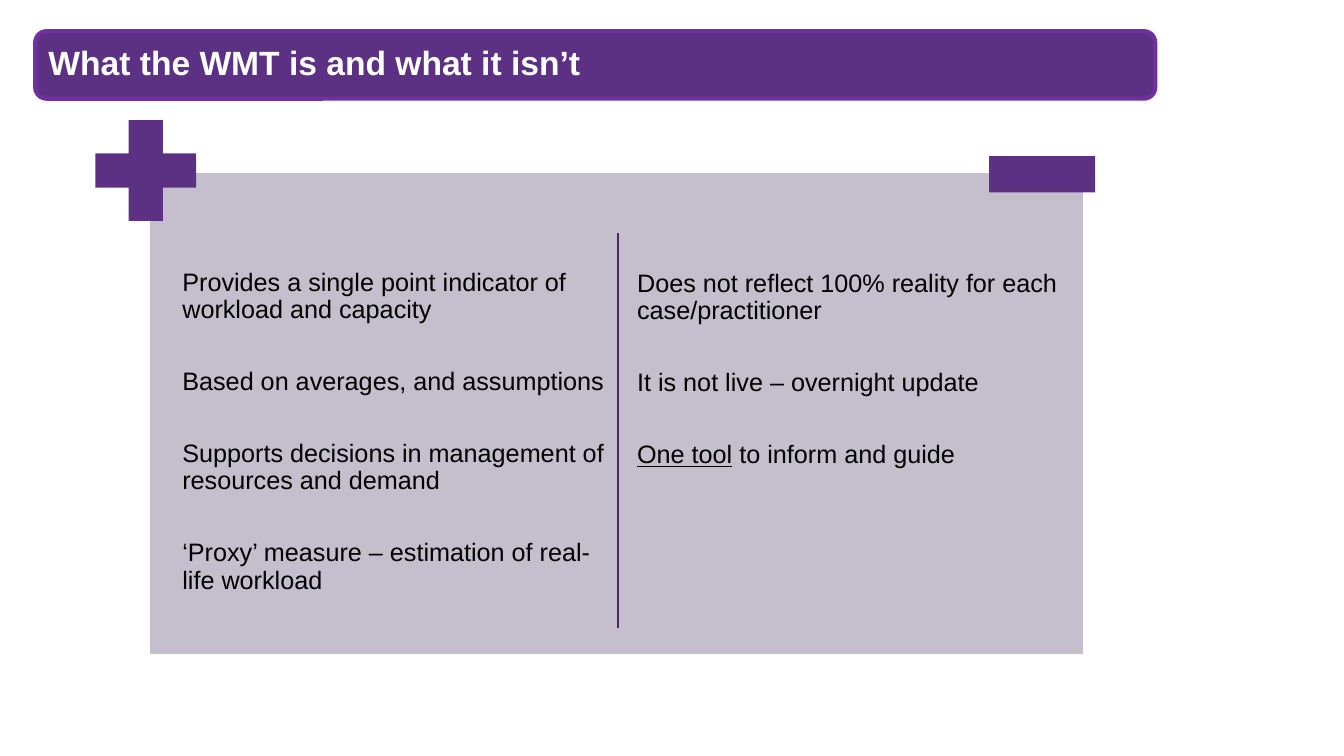
from lxml import etree
from pptx import Presentation
from pptx.dml.color import RGBColor
from pptx.enum.shapes import MSO_CONNECTOR, MSO_SHAPE as SHAPE
from pptx.enum.text import MSO_ANCHOR as ANCHOR, PP_ALIGN as ALIGN
from pptx.oxml.ns import qn
from pptx.util import Pt

TITLE = "What the WMT is and what it isn’t"
# Each point is a list of (text, underlined) spans.
STRENGTHS = [
    [("Provides a single point indicator of workload and capacity", False)],
    [("Based on averages, and assumptions", False)],
    [("Supports decisions in management of resources and demand", False)],
    [("‘Proxy’ measure – estimation of real-life workload", False)],
]
LIMITS = [
    [("Does not reflect 100% reality for each case/practitioner", False)],
    [("It is not live – overnight update", False)],
    [("One tool", True), (" to inform and guide", False)],
]
PURPLE, OUTLINE, PANEL = "5C3183", "7030A0", "C4BECD"
DIVIDER, WHITE, BLACK = "4A2769", "FFFFFF", "000000"

TEXT_WIDTH, TEXT_HEIGHT = 309.6, 250
POINT_GAP = 32
COLUMNS = [(127.4, 189.6, STRENGTHS), (452.2, 190.2, LIMITS)]


def colour(value):
    return RGBColor.from_string(value)


def add_block(page, kind, left, top, width, height, fill, line=None, weight=1):
    block = page.shapes.add_shape(kind, Pt(left), Pt(top), Pt(width), Pt(height))
    block.shadow.inherit = False
    block.fill.solid()
    block.fill.fore_color.rgb = colour(fill)
    if line:
        block.line.color.rgb = colour(line)
        block.line.width = Pt(weight)
    else:
        block.line.fill.background()
    return block


def write(shape, points, *, size, ink, bold=False, inset=2.9, gap=0, anchor=ANCHOR.TOP):
    frame = shape.text_frame
    frame.word_wrap = True
    frame.vertical_anchor = anchor
    frame.margin_left = frame.margin_right = Pt(inset)
    frame.margin_top = frame.margin_bottom = Pt(inset)
    for index, point in enumerate(points):
        para = frame.add_paragraph() if index else frame.paragraphs[0]
        para.alignment = ALIGN.LEFT
        para.line_spacing = 0.9
        if index:
            para.space_before = Pt(gap)
        for text, underlined in point:
            span = para.add_run()
            span.text = text
            font = span.font
            font.name, font.size, font.bold = "Arial", Pt(size), bold
            font.color.rgb = colour(ink)
            if underlined:
                font.underline = True


def main():
    deck = Presentation()
    deck.slide_width, deck.slide_height = Pt(960), Pt(540)
    page = deck.slides.add_slide(deck.slide_layouts[6])

    banner = add_block(page, SHAPE.ROUNDED_RECTANGLE, 25.2, 22.3, 800, 48.2, PURPLE, OUTLINE, 3)
    write(banner, [[(TITLE, False)]], size=24, ink=WHITE, bold=True, inset=7.2,
          anchor=ANCHOR.MIDDLE)

    add_block(page, SHAPE.RECTANGLE, 106.6, 123.3, 667.4, 344.7, PANEL, WHITE)
    for left, top, points in COLUMNS:
        box = page.shapes.add_textbox(Pt(left), Pt(top), Pt(TEXT_WIDTH), Pt(TEXT_HEIGHT))
        write(box, points, size=18, ink=BLACK, gap=POINT_GAP)

    plus = add_block(page, SHAPE.CROSS, 68.2, 85.8, 72, 72, PURPLE)
    plus.adjustments[0] = 0.33
    add_block(page, SHAPE.RECTANGLE, 706.5, 111.5, 75.8, 25.9, PURPLE)

    divider = page.shapes.add_connector(
        MSO_CONNECTOR.STRAIGHT, Pt(441.4), Pt(166.5), Pt(441.4), Pt(448.5))
    divider.line.color.rgb = colour(DIVIDER)
    divider.line.width = Pt(1)
    etree.SubElement(divider._element.spPr, qn("a:effectLst"))

    deck.save("out.pptx")


if __name__ == "__main__":
    main()
